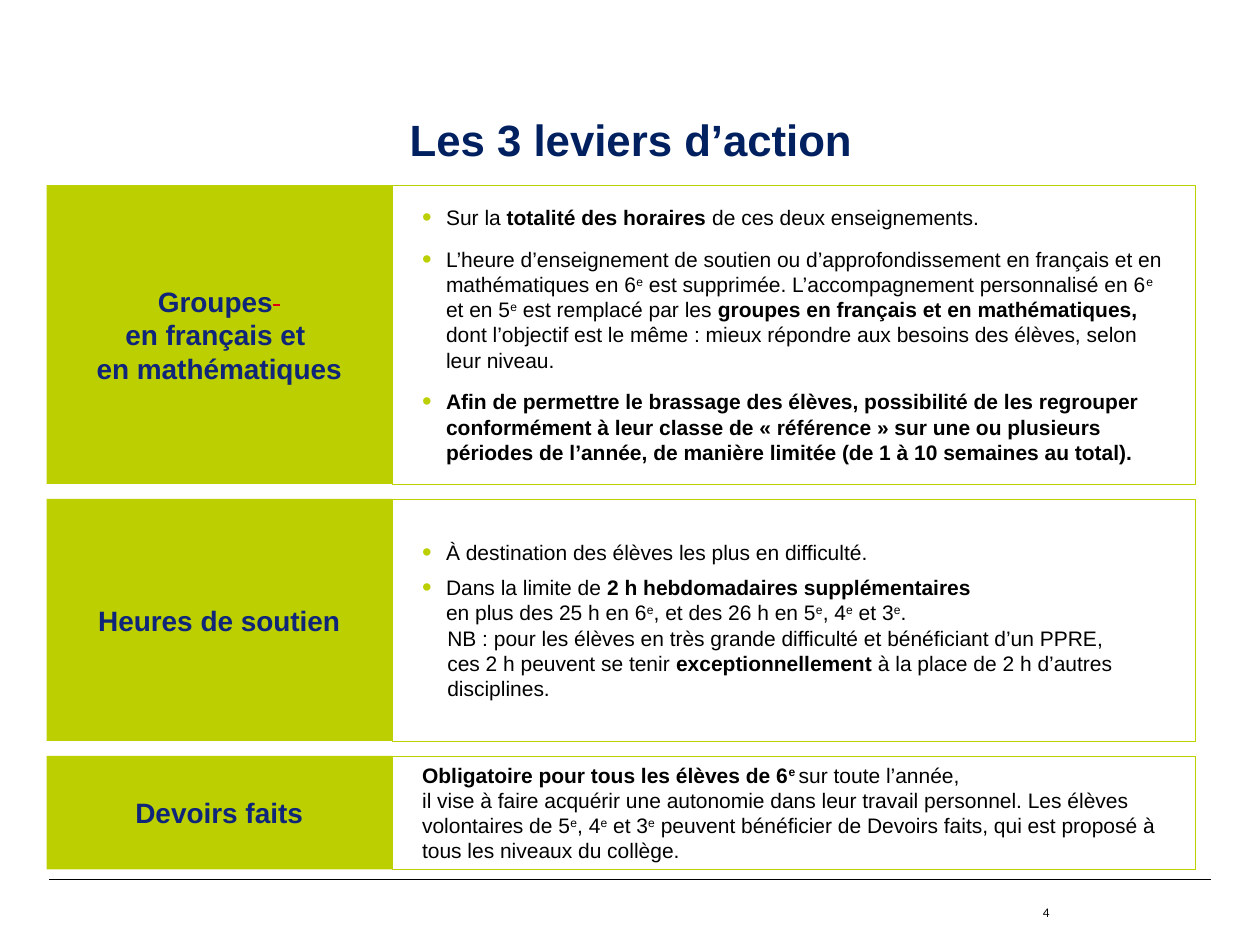
from lxml.etree import SubElement
from pptx import Presentation
from pptx.dml.color import RGBColor
from pptx.enum.shapes import MSO_CONNECTOR, MSO_SHAPE
from pptx.enum.text import MSO_ANCHOR as ANCHOR, PP_ALIGN as ALIGN
from pptx.oxml.ns import qn
from pptx.util import Inches, Pt

COLORS = {"lime": "BCCF00", "navy": "0E2579", "title": "002060",
          "red": "E1000F", "black": "000000"}
LEFT, SPLIT, RIGHT = 0.37, 3.11, 9.49
HANG = 0.19

# In the texts *...* is bold, ^...^ is superscript and ~...~ is struck out in red.
# Each body paragraph is (text, bulleted, space before in points).
ROWS = [
    (1.47, 2.37, ["*Groupes~ ~*", "*en français et *", "*en mathématiques*"], [
        ("Sur la *totalité des horaires *de ces deux enseignements.", True, 0),
        ("L’heure d’enseignement de soutien ou d’approfondissement en français et en "
         "mathématiques en 6^e^ est supprimée. L’accompagnement personnalisé en 6^e^ "
         "et en 5^e^ est remplacé par les *groupes en français et en mathématiques, *"
         "dont l’objectif est le même : mieux répondre aux besoins des élèves, "
         "selon leur niveau.", True, 9.5),
        ("*Afin de permettre le brassage des élèves, possibilité de les regrouper "
         "conformément à leur classe de « référence » sur une ou plusieurs périodes "
         "de l’année, de manière limitée (de 1 à 10 semaines au total).*", True, 9.5),
    ]),
    (3.96, 1.92, ["*Heures de soutien*"], [
        ("À destination des élèves les plus en difficulté.", True, 0),
        ("Dans la limite de *2 h hebdomadaires supplémentaires \n*en plus des 25 h "
         "en 6^e^, et des 26 h en 5^e^, 4^e^ et 3^e^.", True, 6),
        ("NB : pour les élèves en très grande difficulté et bénéficiant d’un PPRE, \n"
         "ces 2 h peuvent se tenir *exceptionnellement* à la place de 2 h d’autres "
         "disciplines.", False, 0),
    ]),
    (6, 0.9, ["*Devoirs faits*"], [
        ("*Obligatoire pour tous les élèves de 6^e ^*sur toute l’année,\n"
         "il vise à faire acquérir une autonomie dans leur travail personnel. "
         "Les élèves volontaires de 5^e^, 4^e^ et 3^e^ peuvent bénéficier de Devoirs "
         "faits, qui est proposé à tous les niveaux du collège.", None, 0),
    ]),
]


def rgb(name):
    return RGBColor.from_string(COLORS[name])


class SlideBuilder:
    def __init__(self, slide, font="Arial"):
        self.slide, self.font = slide, font

    def frame(self, sp, anchor, margins):
        """Set wrapping, anchor and (horizontal, vertical) margins."""
        tf = sp.text_frame
        x, y = (Inches(m) for m in margins)
        values = {"word_wrap": True, "vertical_anchor": anchor, "margin_left": x,
                  "margin_right": x, "margin_top": y, "margin_bottom": y}
        for name, value in values.items():
            setattr(tf, name, value)
        return tf

    def runs(self, p, text, size, color, font=None):
        """Add text with its bold, superscript and struck marks as runs."""
        bold = sup = struck = False
        buffer = ""
        for ch in text + "\0":
            if ch not in "*^~\n\0":
                buffer += ch
                continue
            if buffer:
                r = p.add_run()
                r.text, buffer = buffer, ""
                values = {"name": font or self.font, "size": Pt(size), "bold": bold}
                for name, value in values.items():
                    setattr(r.font, name, value)
                r.font.color.rgb = rgb("red" if struck else color)
                rpr = r.font._element
                if sup:
                    rpr.set("baseline", "30000")
                if struck:
                    rpr.set("strike", "sngStrike")
            if ch == "\n":
                br = SubElement(p._p, qn("a:br"))
                SubElement(br, qn("a:rPr"), sz=str(size * 100))
            bold ^= ch == "*"
            sup ^= ch == "^"
            struck ^= ch == "~"

    def bullet(self, p):
        ppr = p._p.get_or_add_pPr()
        color = SubElement(ppr, qn("a:buClr"))
        SubElement(color, qn("a:srgbClr"), val=COLORS["lime"])
        SubElement(ppr, qn("a:buSzPct"), val="130000")
        SubElement(ppr, qn("a:buFont"), typeface=self.font)
        SubElement(ppr, qn("a:buChar"), char="•")

    def box(self, left, top, right, height):
        sp = self.slide.shapes.add_shape(
            MSO_SHAPE.RECTANGLE, Inches(left), Inches(top),
            Inches(right - left), Inches(height))
        sp.shadow.inherit = False
        return sp

    def label(self, top, height, lines):
        sp = self.box(LEFT, top, SPLIT, height)
        sp.fill.solid()
        sp.fill.fore_color.rgb = rgb("lime")
        sp.line.fill.background()
        tf = self.frame(sp, ANCHOR.MIDDLE, (0.1, 0.05))
        for i, line in enumerate(lines):
            p = tf.add_paragraph() if i else tf.paragraphs[0]
            p.alignment = ALIGN.CENTER
            self.runs(p, line, 16, "navy")

    def body(self, top, height, items):
        sp = self.box(SPLIT, top, RIGHT, height)
        sp.fill.background()
        sp.line.color.rgb = rgb("lime")
        sp.line.width = Pt(0.25)
        tf = self.frame(sp, ANCHOR.MIDDLE, (0.24, 0.05))
        for i, (text, bulleted, before) in enumerate(items):
            p = tf.add_paragraph() if i else tf.paragraphs[0]
            p.alignment = ALIGN.LEFT
            p.space_before = Pt(before)
            if bulleted is not None:
                ppr = p._p.get_or_add_pPr()
                ppr.set("marL", str(Inches(HANG if bulleted else 0.2)))
                ppr.set("indent", str(Inches(-HANG if bulleted else 0)))
            if bulleted:
                self.bullet(p)
            self.runs(p, text, 12, "black")

    def title(self, text):
        sp = self.slide.shapes.title
        values = {"left": 2.8, "top": 0.89, "width": 4.41, "height": 0.52}
        for name, value in values.items():
            setattr(sp, name, Inches(value))
        p = self.frame(sp, ANCHOR.TOP, (0.1, 0.05)).paragraphs[0]
        p.alignment, p.line_spacing = ALIGN.CENTER, 0.9
        self.runs(p, f"*{text}*", 25, "title")

    def rule(self, x1, x2, y):
        line = self.slide.shapes.add_connector(
            MSO_CONNECTOR.STRAIGHT, Inches(x1), Inches(y), Inches(x2), Inches(y))
        line.line.color.rgb = rgb("black")
        line.line.width = Pt(0.8)
        SubElement(line._element.spPr, qn("a:effectLst"))

    def page_number(self, text):
        sp = self.slide.shapes.add_textbox(
            Inches(6.85), Inches(6.98), Inches(1.48), Inches(0.52))
        p = self.frame(sp, ANCHOR.MIDDLE, (0, 0)).paragraphs[0]
        p.alignment = ALIGN.RIGHT
        self.runs(p, text, 7.5, "black", "Calibri")


def main():
    prs = Presentation()
    prs.slide_width, prs.slide_height = Inches(10), Inches(7.5)
    s = SlideBuilder(prs.slides.add_slide(prs.slide_layouts[5]))
    s.rule(0.39, 9.61, 6.98)
    s.title("Les 3 leviers d’action")
    for top, height, lines, items in ROWS:
        s.label(top, height, lines)
        s.body(top, height, items)
    s.page_number("4")
    prs.save("out.pptx")


if __name__ == "__main__":
    main()
